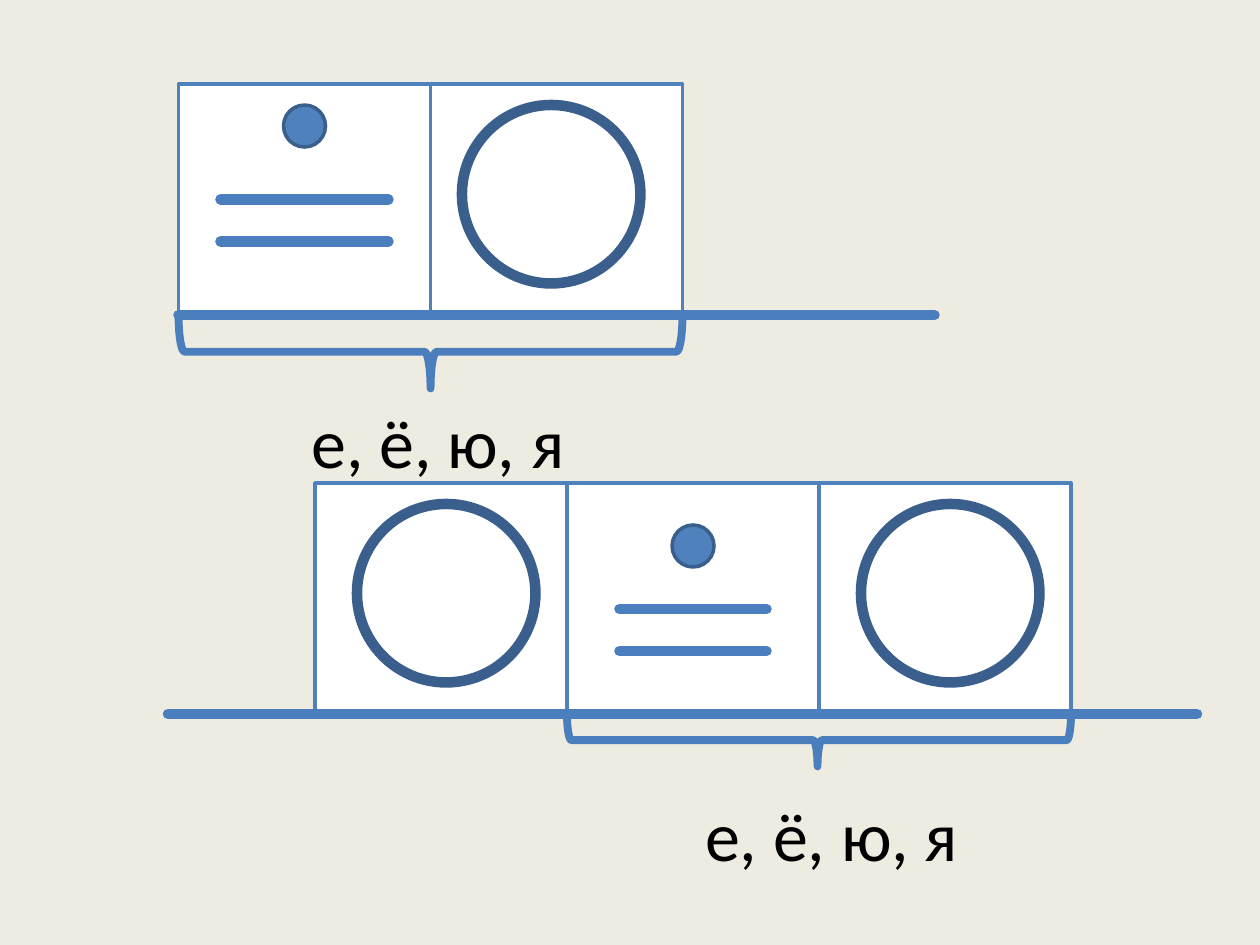
from pptx import Presentation, util as u
from pptx.dml.color import RGBColor
from pptx.enum import shapes, text
from pptx.oxml.ns import qn
from lxml import etree

Pt = u.Pt
KIND = shapes.MSO_SHAPE
PALE, WHITE, BLACK = "EEECE1", "FFFFFF", "000000"
BLUE, STROKE, DARK = "4F81BD", "4B7EBC", "3A5F8C"
CELL_W, CELL_H, RING, DOT = 144, 132, 102, 24


def color(code):
    return RGBColor.from_string(code)


def stroke(item, code, width):
    """Set a line with round caps and joins."""
    item.line.color.rgb = color(code)
    item.line.width = Pt(width)
    ln = item.line._ln
    ln.set("cap", "rnd")
    etree.SubElement(ln, qn("a:round"))


def shape(slide, kind, x, y, w, h, fill, code, width):
    item = slide.shapes.add_shape(kind, Pt(x), Pt(y), Pt(w), Pt(h))
    item.shadow.inherit = False
    if fill:
        item.fill.solid()
        item.fill.fore_color.rgb = color(fill)
    else:
        item.fill.background()
    stroke(item, code, width)
    return item


def line(slide, left, right, y):
    item = slide.shapes.add_connector(
        shapes.MSO_CONNECTOR.STRAIGHT, Pt(left), Pt(y), Pt(right), Pt(y))
    stroke(item, STROKE, 6)
    etree.SubElement(item._element.spPr, qn("a:effectLst"))


def cells(slide, x, y, count):
    for i in range(count):
        shape(slide, KIND.RECTANGLE, x + i * CELL_W, y, CELL_W, CELL_H,
              WHITE, BLUE, 2)


def soft(slide, x, y, left, right, top):
    """Soft consonant: a dot above two bars."""
    shape(slide, KIND.OVAL, x, y, DOT, DOT, BLUE, DARK, 2)
    for bar in (top, top + 24):
        line(slide, left, right, bar)


def vowel(slide, x, y):
    shape(slide, KIND.OVAL, x, y, RING, RING, WHITE, DARK, 6)


def brace(slide, x, y, span, depth, mid):
    """Brace below a pair of cells: a right brace turned by 90 degrees."""
    item = shape(slide, KIND.RIGHT_BRACE, x + (span - depth) / 2,
                 y + (depth - span) / 2, depth, span, None, STROKE, 4.5)
    item.rotation = 90
    item.adjustments[0] = 0.083
    item.adjustments[1] = mid


def label(slide, x, y):
    box = slide.shapes.add_textbox(Pt(x), Pt(y), Pt(180), Pt(49))
    frame = box.text_frame
    frame.word_wrap = True
    frame.vertical_anchor = text.MSO_ANCHOR.TOP
    frame.margin_left = frame.margin_right = 0
    frame.margin_top = frame.margin_bottom = 0
    para = frame.paragraphs[0]
    para.text = "е, ё, ю, я"
    para.font.name = "Calibri"
    para.font.size = Pt(40)
    para.font.color.rgb = color(BLACK)


def main():
    deck = Presentation()
    deck.slide_width, deck.slide_height = Pt(720), Pt(540)
    slide = deck.slides.add_slide(deck.slide_layouts[6])
    slide.background.fill.solid()
    slide.background.fill.fore_color.rgb = color(PALE)

    # Upper scheme: consonant and vowel
    cells(slide, 102, 48, 2)
    soft(slide, 162, 60, 126, 222, 114)
    vowel(slide, 264, 60)
    line(slide, 102, 534, 180)
    brace(slide, 102, 180, 2 * CELL_W, 42, 0.5)
    label(slide, 178, 228)

    # Lower scheme: vowel, consonant, vowel
    cells(slide, 180, 276, 3)
    soft(slide, 384, 300, 354, 438, 348)
    for x in (204, 492):
        vowel(slide, x, 288)
    line(slide, 96, 684, 408)
    brace(slide, 324, 408, 2 * CELL_W, 30, 0.503)
    label(slide, 403, 452)

    deck.save("out.pptx")


if __name__ == "__main__":
    main()
